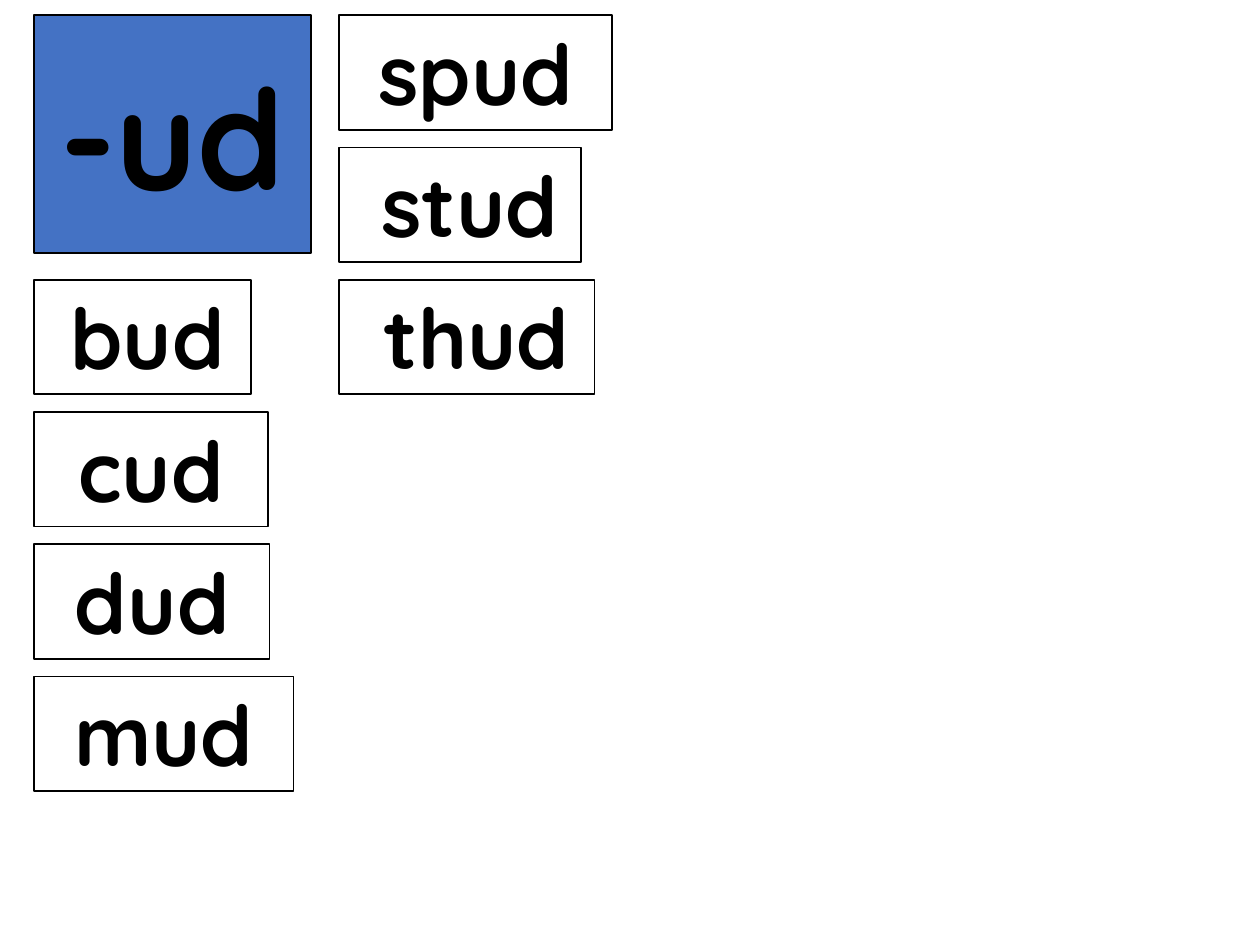
from pptx import Presentation
from pptx.dml.color import RGBColor
from pptx.enum.shapes import MSO_SHAPE
from pptx.enum.text import MSO_ANCHOR, PP_ALIGN
from pptx.util import Inches, Pt

COLORS = {"ink": "000000", "card": "FFFFFF", "title": "4472C4"}
FONT = "Quicksand"
COLUMNS = (0.27, 2.69)
TOP, ROW_STEP, CARD_HEIGHT = 0.12, 1.05, 0.91
INSET = 0.1

CARDS = [
    ("spud", 1, 0, 2.17, 0),
    ("stud", 1, 1, 1.92, 0.15),
    ("thud", 1, 2, 2.03, 0.15),
    ("bud", 0, 2, 1.72, 0.08),
    ("cud", 0, 3, 1.86, 0),
    ("dud", 0, 4, 1.87, 0),
    ("mud", 0, 5, 2.06, 0),
]


def color(name):
    return RGBColor.from_string(COLORS[name])


def add_box(s, text, col, row, width, height, fill, size, anchor, indent=0):
    sp = s.shapes.add_shape(
        MSO_SHAPE.RECTANGLE,
        Inches(COLUMNS[col]), Inches(TOP + row * ROW_STEP),
        Inches(width), Inches(height),
    )
    sp.shadow.inherit = False
    sp.fill.solid()
    sp.fill.fore_color.rgb = color(fill)
    sp.line.color.rgb = color("ink")
    sp.line.width = Pt(1)
    tf = sp.text_frame
    tf.text = text
    tf.word_wrap = False
    tf.vertical_anchor = anchor
    tf.margin_left = Inches(INSET + indent)
    p = tf.paragraphs[0]
    p.alignment = PP_ALIGN.CENTER
    font = p.runs[0].font
    font.name = FONT
    font.size = Pt(size)
    font.bold = True
    font.color.rgb = color("ink")


def add_card(s, word, col, row, width, indent):
    add_box(s, word, col, row, width, CARD_HEIGHT, "card", 48, MSO_ANCHOR.TOP, indent)


def add_title(s, text):
    add_box(s, text, 0, 0, 2.2, 1.89, "title", 80, MSO_ANCHOR.MIDDLE)


def main():
    prs = Presentation()
    prs.slide_width, prs.slide_height = Inches(10), Inches(7.5)
    s = prs.slides.add_slide(prs.slide_layouts[6])
    for card in CARDS:
        add_card(s, *card)
    add_title(s, "-ud")
    prs.save("out.pptx")


if __name__ == "__main__":
    main()
